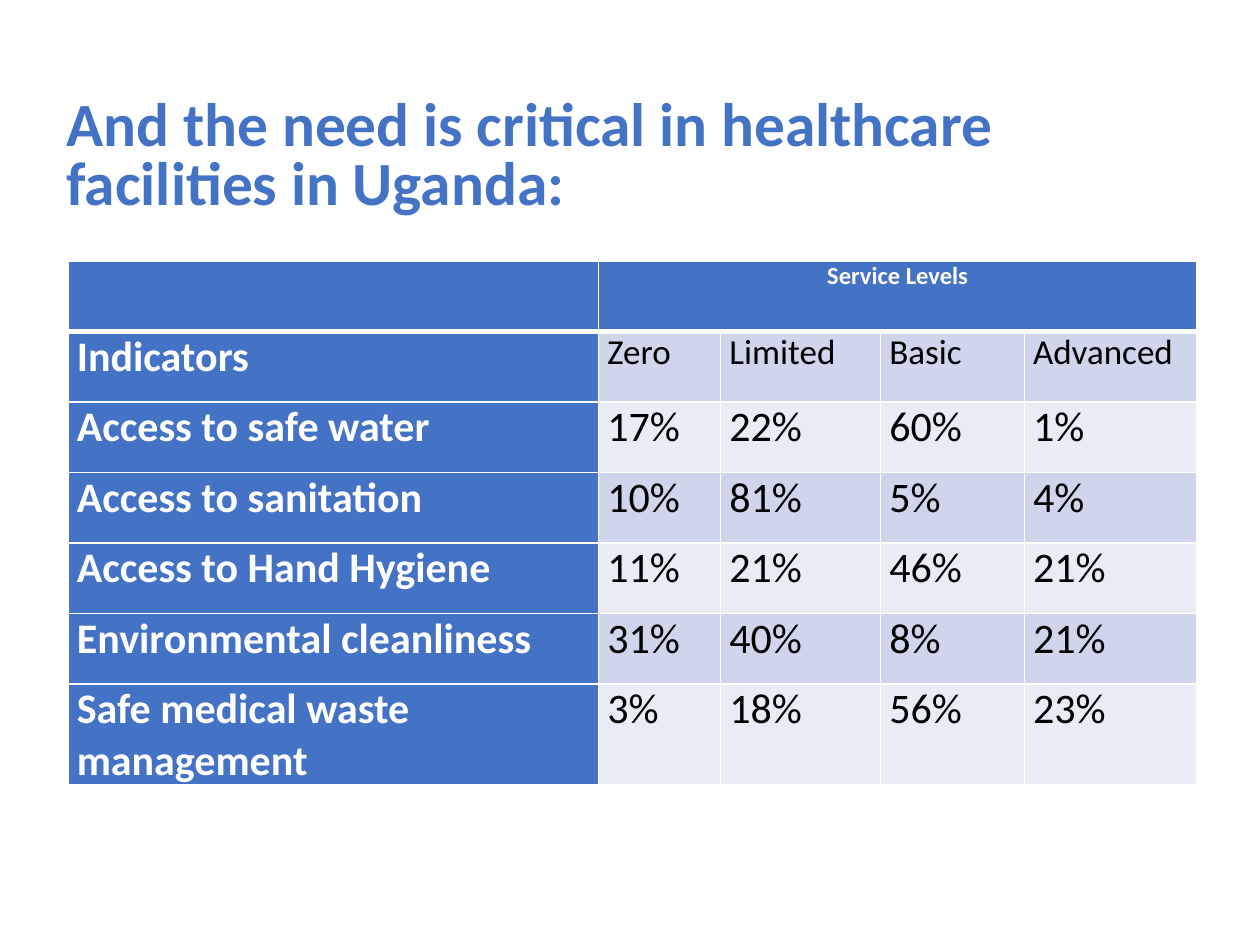
from dataclasses import dataclass

from lxml import etree
from pptx import Presentation
from pptx.dml.color import RGBColor
from pptx.enum.text import MSO_ANCHOR, PP_ALIGN
from pptx.oxml.ns import qn
from pptx.slide import Slide
from pptx.table import Table, _Cell
from pptx.text.text import TextFrame
from pptx.util import Inches, Pt

LEFT = PP_ALIGN.LEFT
CENTER = PP_ALIGN.CENTER
MIDDLE = MSO_ANCHOR.MIDDLE
BLANK_LAYOUT = 6


@dataclass(frozen=True)
class Theme:
    font: str = "Calibri"
    blue: str = "4472C4"
    white: str = "FFFFFF"
    black: str = "000000"
    bands: tuple[str, str] = ("CFD5EA", "E9EBF5")
    title_size: float = 35.1
    group_size: float = 14
    level_size: float = 20
    body_size: float = 24
    rule: float = 1
    header_rule: float = 3


@dataclass(frozen=True)
class TextStyle:
    size: float
    color: str
    bold: bool = False
    align: PP_ALIGN = LEFT


@dataclass(frozen=True)
class Indicator:
    name: str
    shares: tuple[int, ...]


THEME = Theme()
TITLE_STYLE = TextStyle(THEME.title_size, THEME.blue, bold=True)
GROUP_STYLE = TextStyle(THEME.group_size, THEME.white, bold=True, align=CENTER)
LABEL_STYLE = TextStyle(THEME.body_size, THEME.white, bold=True)
LEVEL_STYLE = TextStyle(THEME.level_size, THEME.black)
SHARE_STYLE = TextStyle(THEME.body_size, THEME.black)

TITLE = "And the need is critical in healthcare facilities in Uganda:"
LEVELS = ("Zero", "Limited", "Basic", "Advanced")
INDICATORS = (
    Indicator("Access to safe water", (17, 22, 60, 1)),
    Indicator("Access to sanitation", (10, 81, 5, 4)),
    Indicator("Access to Hand Hygiene", (11, 21, 46, 21)),
    Indicator("Environmental cleanliness", (31, 40, 8, 21)),
    Indicator("Safe medical waste management", (3, 18, 56, 23)),
)
COLUMN_WIDTHS = (4.21, 0.97, 1.27, 1.14, 1.37)
ROW_HEIGHT = 0.56


def write(frame: TextFrame, text: str, style: TextStyle) -> None:
    para = frame.paragraphs[0]
    para.alignment = style.align
    span = para.add_run()
    span.text = text
    values = {"name": THEME.font, "size": Pt(style.size), "bold": style.bold}
    for attribute, value in values.items():
        setattr(span.font, attribute, value)
    span.font.color.rgb = RGBColor.from_string(style.color)


def add_title(page: Slide) -> None:
    box = page.shapes.add_textbox(Inches(0.43), Inches(0.7), Inches(8.62), Inches(1.11))
    frame = box.text_frame
    frame.word_wrap = True
    frame.vertical_anchor = MIDDLE
    write(frame, TITLE, TITLE_STYLE)
    frame.paragraphs[0].line_spacing = 0.8


def set_borders(cell: _Cell, top: float, bottom: float) -> None:
    properties = cell._tc.get_or_add_tcPr()
    widths = {"L": THEME.rule, "R": THEME.rule, "T": top, "B": bottom}
    for side, width in widths.items():
        line = etree.SubElement(properties, qn(f"a:ln{side}"), w=str(Pt(width)))
        fill = etree.SubElement(line, qn("a:solidFill"))
        etree.SubElement(fill, qn("a:srgbClr"), val=THEME.white)


def format_cell(cell: _Cell, row: int, column: int) -> None:
    set_borders(
        cell,
        top=THEME.header_rule if row == 1 else THEME.rule,
        bottom=THEME.header_rule if row == 0 else THEME.rule,
    )
    is_heading = row == 0 or column == 0
    color = THEME.blue if is_heading else THEME.bands[(row - 1) % 2]
    cell.fill.solid()
    cell.fill.fore_color.rgb = RGBColor.from_string(color)
    margins = {
        "margin_left": Inches(0.07),
        "margin_right": Inches(0.07),
        "margin_top": 0,
        "margin_bottom": 0,
    }
    for attribute, value in margins.items():
        setattr(cell, attribute, value)


def fill_row(table: Table, row: int, label: str, values: tuple[str, ...], style: TextStyle) -> None:
    write(table.cell(row, 0).text_frame, label, LABEL_STYLE)
    for column, value in enumerate(values, start=1):
        write(table.cell(row, column).text_frame, value, style)


def add_service_table(page: Slide) -> None:
    row_count = len(INDICATORS) + 2
    table = page.shapes.add_table(
        row_count,
        len(COLUMN_WIDTHS),
        Inches(0.54),
        Inches(2.07),
        Inches(sum(COLUMN_WIDTHS)),
        Inches(ROW_HEIGHT * row_count),
    ).table
    table.first_col = True
    for column, width in zip(table.columns, COLUMN_WIDTHS):
        column.width = Inches(width)
    for row_index, row in enumerate(table.rows):
        row.height = Inches(ROW_HEIGHT)
        for column_index, cell in enumerate(row.cells):
            format_cell(cell, row_index, column_index)

    group = table.cell(0, 1)
    group.merge(table.cell(0, len(LEVELS)))
    write(group.text_frame, "Service Levels", GROUP_STYLE)
    fill_row(table, 1, "Indicators", LEVELS, LEVEL_STYLE)
    for row_index, indicator in enumerate(INDICATORS, start=2):
        shares = tuple(f"{share}%" for share in indicator.shares)
        fill_row(table, row_index, indicator.name, shares, SHARE_STYLE)


def main() -> None:
    deck = Presentation()
    deck.slide_width = Inches(10)
    deck.slide_height = Inches(7.5)
    page = deck.slides.add_slide(deck.slide_layouts[BLANK_LAYOUT])
    add_title(page)
    add_service_table(page)
    deck.save("out.pptx")


if __name__ == "__main__":
    main()
